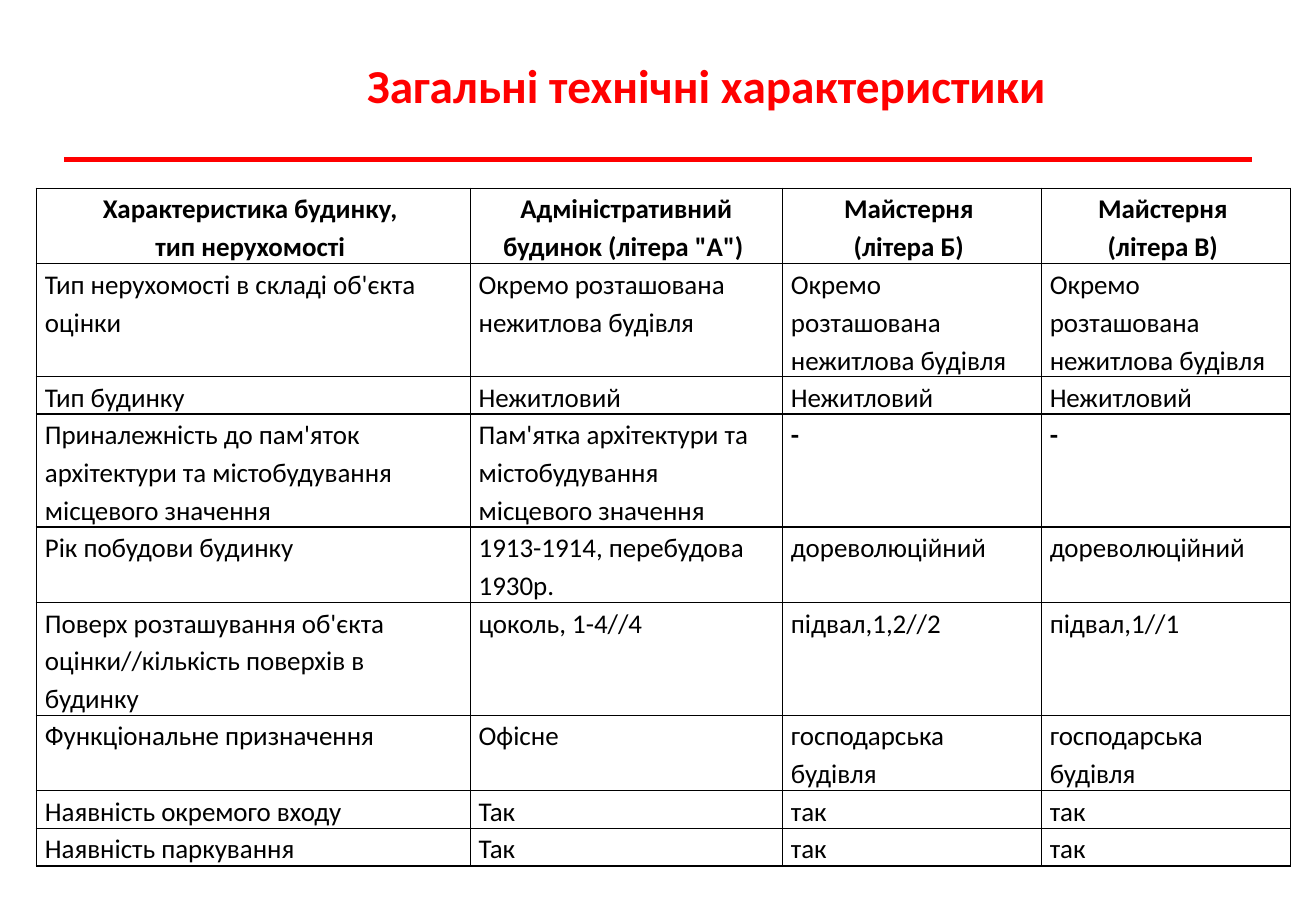
import pptx
import pptx.dml.color
import pptx.enum.shapes
import pptx.enum.text
import pptx.oxml
import pptx.oxml.ns
import pptx.util

PX = 9144  # 100 px to the inch
COLORS = {"accent": "FF0000", "ink": "000000"}
ALIGN = pptx.enum.text.PP_ALIGN
ANCHOR = pptx.enum.text.MSO_ANCHOR


def write(frame, text, size=16, color="ink", bold=False, align=ALIGN.LEFT, spacing=1.0):
    frame.word_wrap = True
    for index, line in enumerate(text.split("\n")):
        para = frame.add_paragraph() if index else frame.paragraphs[0]
        para.alignment = align
        para.line_spacing = spacing
        span = para.add_run()
        span.text = line
        span.font.name = "Calibri"
        span.font.size = pptx.util.Pt(size)
        span.font.bold = bold
        span.font.color.rgb = pptx.dml.color.RGBColor.from_string(COLORS[color])


deck = pptx.Presentation()
deck.slide_width, deck.slide_height = 1083 * PX, 750 * PX
page = deck.slides.add_slide(deck.slide_layouts[6])

# Red rule under the title
rule = page.shapes.add_connector(
    pptx.enum.shapes.MSO_CONNECTOR.STRAIGHT, 53 * PX, 131 * PX, 1030 * PX, 131 * PX)
rule.line.color.rgb = pptx.dml.color.RGBColor.from_string(COLORS["accent"])
rule.line.width = pptx.util.Pt(3)
rule_properties = rule.element.find(pptx.oxml.ns.qn("p:spPr"))
rule_properties.append(pptx.oxml.parse_xml(
    f'<a:effectLst {pptx.oxml.ns.nsdecls("a")}/>'))

# Title
title = page.shapes.add_textbox(172 * PX, 29 * PX, 827 * PX, 81 * PX)
title.text_frame.vertical_anchor = ANCHOR.MIDDLE
write(title.text_frame, "Загальні технічні характеристики ", size=28,
      color="accent", bold=True, align=ALIGN.CENTER)

# Table: number of text lines in each row, then its cells
ROWS = [
    (2, ["Характеристика будинку, \nтип нерухомості ",
         'Адміністративний будинок (літера "А") ',
         "Майстерня \n(літера Б) ", "Майстерня \n(літера В) "]),
    (3, ["Тип нерухомості в складі об'єкта оцінки",
         "Окремо розташована нежитлова будівля",
         "Окремо розташована нежитлова будівля",
         "Окремо розташована нежитлова будівля"]),
    (1, ["Тип будинку", "Нежитловий", "Нежитловий", "Нежитловий"]),
    (3, ["Приналежність до пам'яток архітектури та містобудування місцевого значення",
         "Пам'ятка архітектури та містобудування місцевого значення", "-", "-"]),
    (2, ["Рік побудови будинку", "1913-1914, перебудова 1930р.",
         "дореволюційний", "дореволюційний"]),
    (3, ["Поверх розташування об'єкта оцінки//кількість поверхів в будинку",
         "цоколь, 1-4//4", "підвал,1,2//2", "підвал,1//1"]),
    (2, ["Функціональне призначення", "Офісне",
         "господарська будівля", "господарська будівля"]),
    (1, ["Наявність окремого входу", "Так", "так", "так"]),
    (1, ["Наявність паркування", "Так", "так", "так"]),
]
WIDTHS = [357, 257, 213, 205]
LINE_HEIGHT = 31

total_height = LINE_HEIGHT * sum(lines for lines, _ in ROWS)
table = page.shapes.add_table(len(ROWS), len(WIDTHS), 30 * PX, 155 * PX,
                              sum(WIDTHS) * PX, total_height * PX).table
table.first_row = table.horz_banding = False
for column, width in zip(table.columns, WIDTHS):
    column.width = width * PX

for row_index, (lines, texts) in enumerate(ROWS):
    table.rows[row_index].height = lines * LINE_HEIGHT * PX
    header = row_index == 0
    for column_index, text in enumerate(texts):
        cell = table.cell(row_index, column_index)
        cell.margin_left = cell.margin_right = 7 * PX
        cell.margin_top = cell.margin_bottom = 0
        write(cell.text_frame, text, bold=header or text == "-",
              align=ALIGN.CENTER if header else ALIGN.LEFT, spacing=1.15)
        # Borders come before the fill in the cell properties
        for side in "LRTB":
            cell._tc.get_or_add_tcPr().append(pptx.oxml.parse_xml(
                f'<a:ln{side} {pptx.oxml.ns.nsdecls("a")} w="{pptx.util.Pt(1)}">'
                f'<a:solidFill><a:srgbClr val="{COLORS["ink"]}"/></a:solidFill>'
                f'</a:ln{side}>'))
        cell.fill.background()

deck.save("out.pptx")
